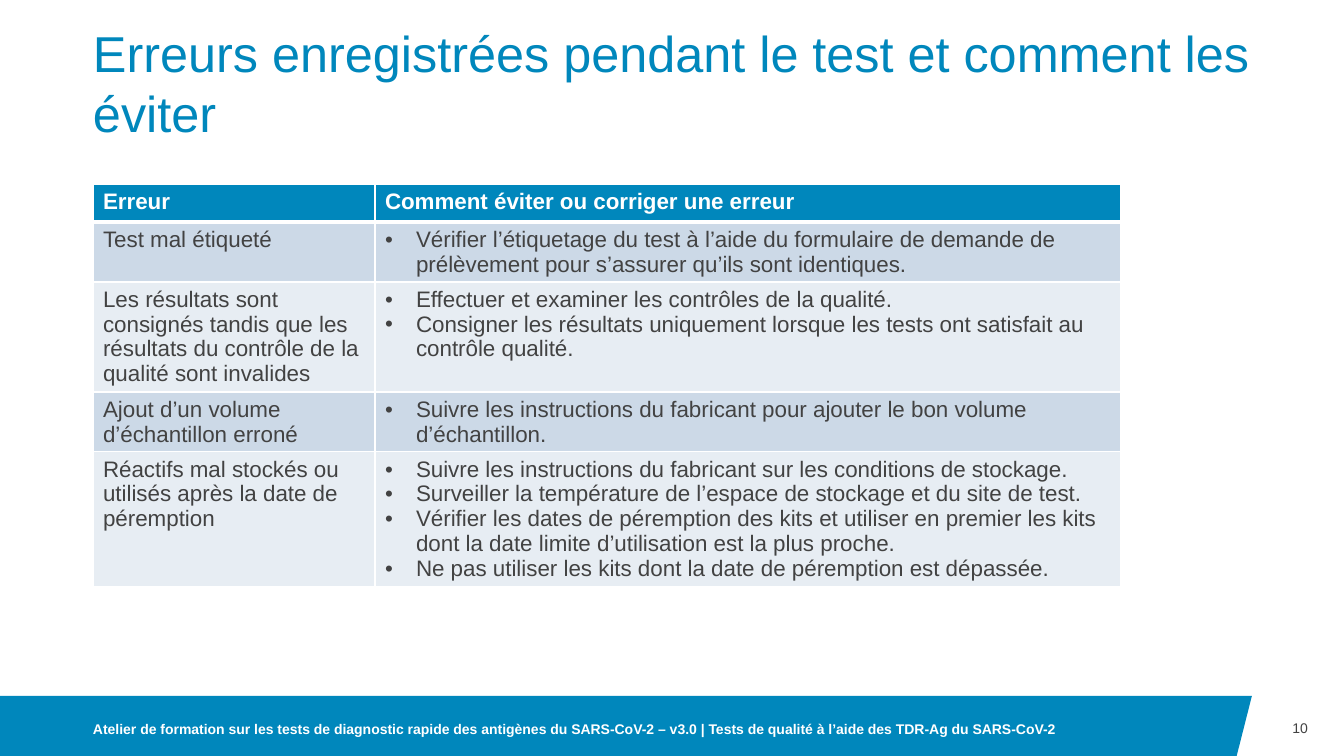
from dataclasses import dataclass

from pptx import Presentation
from pptx.dml.color import RGBColor
from pptx.enum.text import MSO_ANCHOR, PP_ALIGN
from pptx.oxml import parse_xml
from pptx.oxml.ns import nsdecls
from pptx.util import Emu, Pt

SCALE = 914400 / 100.8
BLUE, GREY, WHITE = "0087BC", "424242", "FFFFFF"
BANDS = ("CCD9E7", "E7EDF3")
COLUMNS = (282, 746)
INDENT = 31


@dataclass(frozen=True)
class ErrorRow:
    height: int
    error: str
    remedies: tuple[str, ...]


@dataclass(frozen=True)
class Label:
    box: tuple[int, int, int, int]
    text: str
    size: int
    color: str
    bold: bool = False
    align: PP_ALIGN = PP_ALIGN.LEFT
    anchor: MSO_ANCHOR = MSO_ANCHOR.MIDDLE
    spacing: float = 1.0


HEADER = ErrorRow(38, "Erreur", ("Comment éviter ou corriger une erreur",))
ROWS = (
    ErrorRow(60, "Test mal étiqueté", (
        "Vérifier l’étiquetage du test à l’aide du formulaire de demande de "
        "prélèvement pour s’assurer qu’ils sont identiques.",
    )),
    ErrorRow(110, "Les résultats sont consignés tandis que les résultats du "
             "contrôle de la qualité sont invalides", (
        "Effectuer et examiner les contrôles de la qualité.",
        "Consigner les résultats uniquement lorsque les tests ont satisfait au "
        "contrôle qualité.",
    )),
    ErrorRow(60, "Ajout d’un volume d’échantillon erroné", (
        "Suivre les instructions du fabricant pour ajouter le bon volume "
        "d’échantillon.",
    )),
    ErrorRow(134, "Réactifs mal stockés ou utilisés après la date de péremption", (
        "Suivre les instructions du fabricant sur les conditions de stockage.",
        "Surveiller la température de l’espace de stockage et du site de test.",
        "Vérifier les dates de péremption des kits et utiliser en premier les kits "
        "dont la date limite d’utilisation est la plus proche.",
        "Ne pas utiliser les kits dont la date de péremption est dépassée.",
    )),
)
LABELS = (
    Label((93, 40, 1159, 104), "Erreurs enregistrées pendant le test et comment les éviter",
          36, BLUE, anchor=MSO_ANCHOR.BOTTOM, spacing=0.98),
    Label((1252, 696, 56, 63), "10", 10, GREY, align=PP_ALIGN.RIGHT),
    Label((93, 701, 1072, 55),
          "Atelier de formation sur les tests de diagnostic rapide des antigènes du "
          "SARS-CoV-2 – v3.0 | Tests de qualité à l’aide des TDR-Ag du SARS-CoV-2",
          10, WHITE, bold=True),
)


def px(n: int) -> Emu:
    return Emu(round(n * SCALE))


def rgb(color: str) -> RGBColor:
    return RGBColor.from_string(color)


def write(tf, *texts: str, size: int, color: str, bold: bool = False,
          align: PP_ALIGN = PP_ALIGN.LEFT, spacing: float = 1.0,
          bullet: bool = False) -> None:
    for i, text in enumerate(texts):
        p = tf.add_paragraph() if i else tf.paragraphs[0]
        p.alignment = align
        p.line_spacing = spacing
        if bullet:
            pPr = p._p.get_or_add_pPr()
            pPr.set("marL", str(px(INDENT)))
            pPr.set("indent", str(-px(INDENT)))
            pPr.append(parse_xml(f'<a:buFont {nsdecls("a")} typeface="Arial"/>'))
            pPr.append(parse_xml(f'<a:buChar {nsdecls("a")} char="•"/>'))
        r = p.add_run()
        r.text = text
        r.font.name = "Arial"
        r.font.size = Pt(size)
        r.font.bold = bold
        r.font.color.rgb = rgb(color)


def add_label(s, label: Label) -> None:
    tf = s.shapes.add_textbox(*map(px, label.box)).text_frame
    tf.word_wrap = True
    tf.vertical_anchor = label.anchor
    tf.margin_left = tf.margin_top = tf.margin_right = tf.margin_bottom = 0
    write(tf, label.text, size=label.size, color=label.color, bold=label.bold,
          align=label.align, spacing=label.spacing)


def style_cell(cell, fill: str, bottom: int) -> None:
    tcPr = cell._tc.get_or_add_tcPr()
    for side, width in (("L", 1), ("R", 1), ("T", 1), ("B", bottom)):
        tcPr.append(parse_xml(
            f'<a:ln{side} {nsdecls("a")} w="{Pt(width)}"><a:solidFill>'
            f'<a:srgbClr val="{WHITE}"/></a:solidFill></a:ln{side}>'))
    cell.fill.solid()
    cell.fill.fore_color.rgb = rgb(fill)


def add_error_table(s) -> None:
    rows = (HEADER, *ROWS)
    height = sum(row.height for row in rows)
    table = s.shapes.add_table(len(rows), len(COLUMNS), px(93), px(184),
                               px(sum(COLUMNS)), px(height)).table
    for column, width in zip(table.columns, COLUMNS):
        column.width = px(width)
    for i, row in enumerate(rows):
        table.rows[i].height = px(row.height)
        head = i == 0
        fill = BLUE if head else BANDS[(i - 1) % 2]
        for j, texts in enumerate(((row.error,), row.remedies)):
            cell = table.cell(i, j)
            style_cell(cell, fill, bottom=3 if head else 1)
            write(cell.text_frame, *texts, size=16, color=WHITE if head else GREY,
                  bold=head, bullet=j == 1 and not head)


def add_footer_band(s) -> None:
    fb = s.shapes.build_freeform(0, 696, scale=SCALE)
    fb.add_line_segments([(1252, 696), (1236, 759), (0, 759)], close=True)
    sp = fb.convert_to_shape()
    sp.shadow.inherit = False
    sp.fill.solid()
    sp.fill.fore_color.rgb = rgb(BLUE)
    sp.line.fill.background()


def main() -> None:
    prs = Presentation()
    prs.slide_width, prs.slide_height = px(1344), px(756)
    s = prs.slides.add_slide(prs.slide_layouts[6])
    add_footer_band(s)
    add_error_table(s)
    for label in LABELS:
        add_label(s, label)
    prs.save("out.pptx")


if __name__ == "__main__":
    main()
